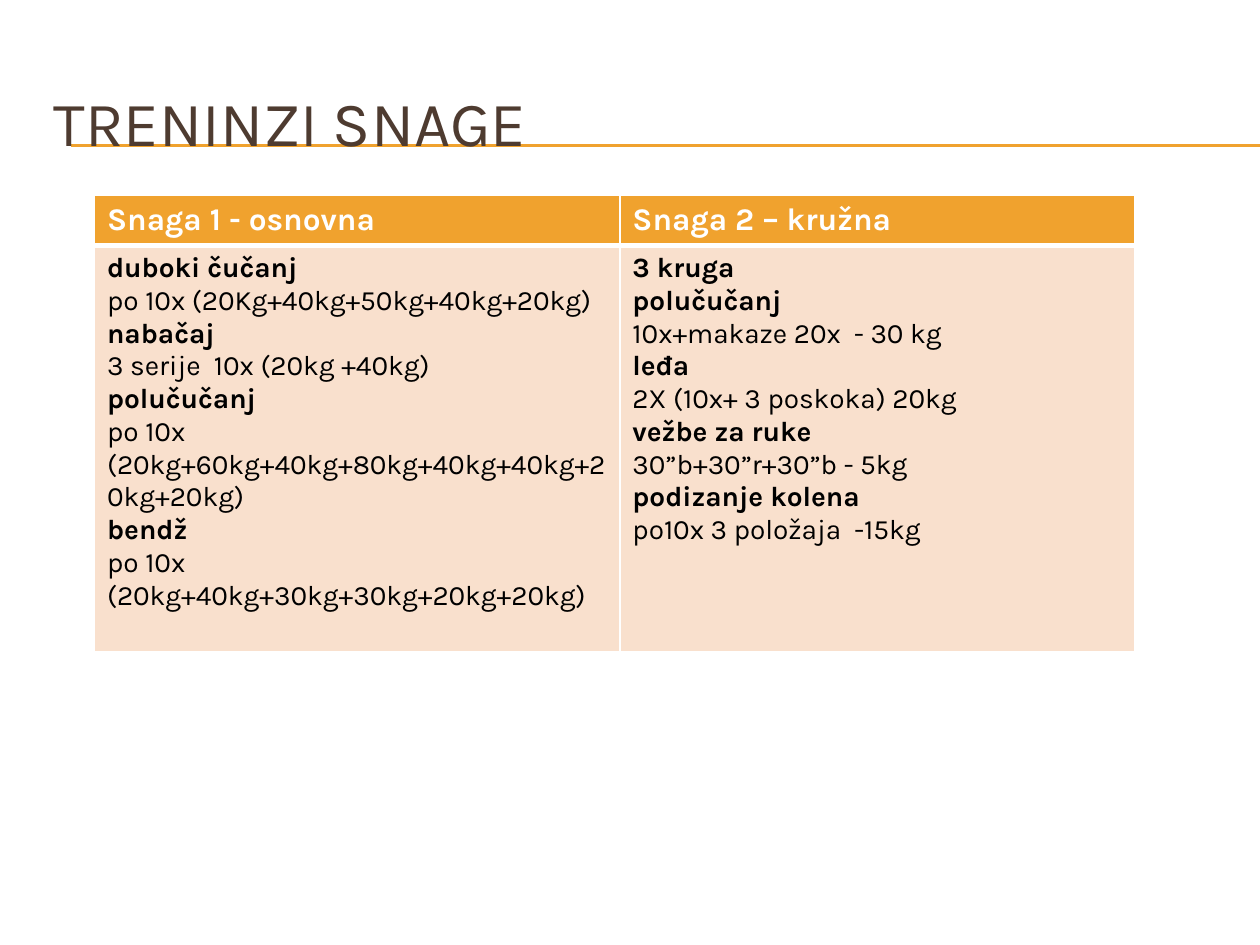
from pptx import Presentation
from pptx.dml.color import RGBColor
from pptx.enum import shapes, text
from pptx.oxml import parse_xml
from pptx.oxml.ns import nsdecls
from pptx.util import Inches, Pt

FONT = "Karla"
ORANGE, PEACH, BROWN, WHITE, BLACK = "F0A22E", "F9E0CD", "4E3B30", "FFFFFF", "000000"

TITLE = "TRENINZI SNAGE"
RULE_HEIGHTS = (1.15, 1.16)
COLUMN_WIDTHS = (4.17, 4.09)
ROW_HEIGHTS = (0.4, 3.22)
# Each training: heading, then (line, bold) pairs
TRAININGS = [
    ("Snaga 1 - osnovna", [
        ("duboki čučanj", True),
        ("po 10x (20Kg+40kg+50kg+40kg+20kg)", False),
        ("nabačaj", True),
        ("3 serije  10x (20kg +40kg)", False),
        ("polučučanj", True),
        ("po 10x (20kg+60kg+40kg+80kg+40kg+40kg+20kg+20kg)", False),
        ("bendž", True),
        ("po 10x (20kg+40kg+30kg+30kg+20kg+20kg)", False),
    ]),
    ("Snaga 2 – kružna", [
        ("3 kruga", True),
        ("polučučanj", True),
        ("10x+makaze 20x  - 30 kg", False),
        ("leđa", True),
        ("2X (10x+ 3 poskoka) 20kg", False),
        ("vežbe za ruke", True),
        ("30”b+30”r+30”b - 5kg", False),
        ("podizanje kolena", True),
        ("po10x 3 položaja  -15kg", False),
    ]),
]


def color(value):
    return RGBColor.from_string(value)


def write(frame, lines, size, ink):
    """Fill a text frame with one paragraph per (line, bold) pair."""
    for index, (line, bold) in enumerate(lines):
        para = frame.paragraphs[0] if index == 0 else frame.add_paragraph()
        para.text = line
        para.font.name = FONT
        para.font.size = Pt(size)
        para.font.bold = bold
        para.font.color.rgb = color(ink)


def add_rule(slide, top):
    rule = slide.shapes.add_connector(
        shapes.MSO_CONNECTOR.STRAIGHT, Inches(0.56), Inches(top), Inches(10), Inches(top))
    rule.line.color.rgb = color(ORANGE)
    rule.line.width = Pt(0.75)
    rule._element.spPr.append(parse_xml(f"<a:effectLst {nsdecls('a')}/>"))


def style_cell(cell, fill, bottom, top):
    """Set white borders (widths in points), then the fill, in schema order."""
    properties = cell._tc.get_or_add_tcPr()
    for side, width in (("L", 1), ("R", 1), ("T", top), ("B", bottom)):
        properties.append(parse_xml(
            f'<a:ln{side} {nsdecls("a")} w="{Pt(width)}"><a:solidFill>'
            f'<a:srgbClr val="{WHITE}"/></a:solidFill></a:ln{side}>'))
    cell.fill.solid()
    cell.fill.fore_color.rgb = color(fill)


def add_title(slide):
    box = slide.shapes.add_textbox(Inches(0.33), Inches(0.5), Inches(9.5), Inches(0.92))
    box.text_frame.word_wrap = True
    box.text_frame.vertical_anchor = text.MSO_ANCHOR.MIDDLE
    write(box.text_frame, [(TITLE, False)], 36, BROWN)


def add_trainings(slide):
    table = slide.shapes.add_table(
        2, len(TRAININGS), Inches(0.75), Inches(1.55),
        Inches(sum(COLUMN_WIDTHS)), Inches(sum(ROW_HEIGHTS))).table
    for row, height in zip(table.rows, ROW_HEIGHTS):
        row.height = Inches(height)
    for index, (heading, lines) in enumerate(TRAININGS):
        table.columns[index].width = Inches(COLUMN_WIDTHS[index])
        header, body = table.cell(0, index), table.cell(1, index)
        style_cell(header, ORANGE, bottom=3, top=1)
        style_cell(body, PEACH, bottom=1, top=3)
        write(header.text_frame, [(heading, True)], 18, WHITE)
        write(body.text_frame, lines, 16, BLACK)


def main():
    deck = Presentation()
    deck.slide_width, deck.slide_height = Inches(10), Inches(7.5)
    slide = deck.slides.add_slide(deck.slide_layouts[6])
    for top in RULE_HEIGHTS:
        add_rule(slide, top)
    add_title(slide)
    add_trainings(slide)
    deck.save("out.pptx")


if __name__ == "__main__":
    main()
